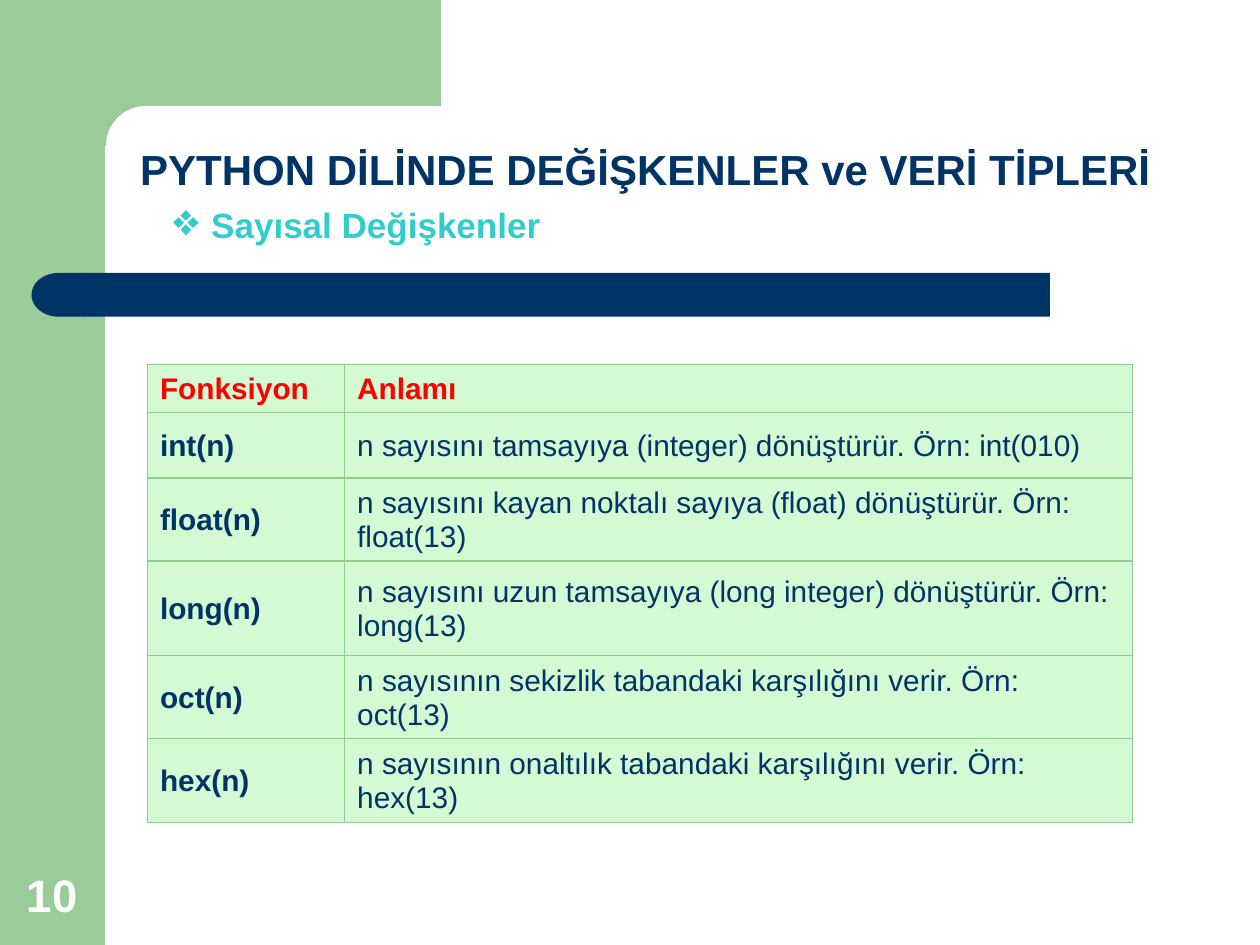
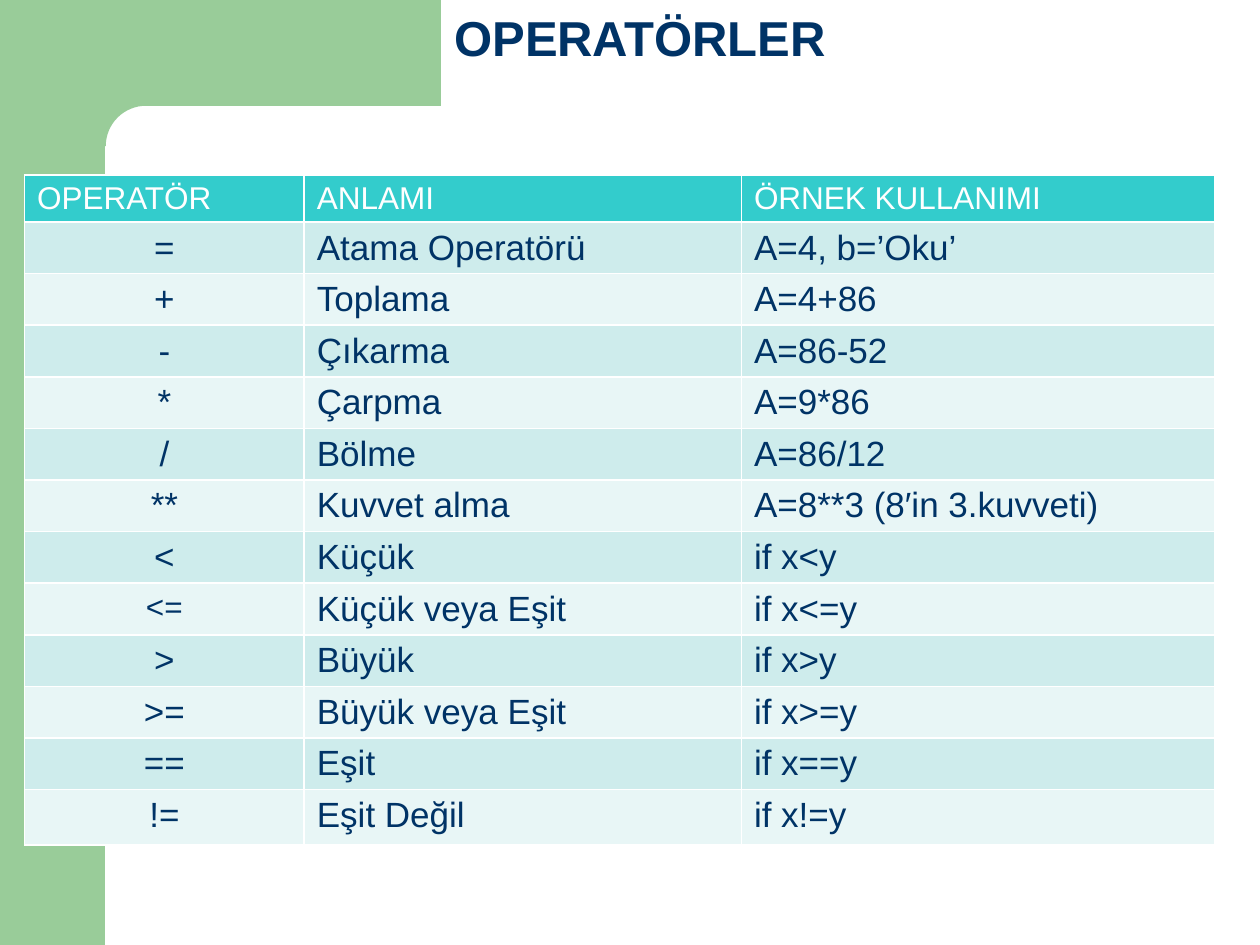
from math import cos, pi, sin

from lxml.etree import SubElement
from pptx import Presentation
from pptx.dml.color import RGBColor as RGB
from pptx.enum.shapes import MSO_SHAPE as SHAPE
from pptx.enum.text import MSO_ANCHOR as ANCHOR, PP_ALIGN as ALIGN
from pptx.oxml.ns import qn
from pptx.util import Inches, Pt

WIDTH, HEIGHT = Inches(10), Inches(7.5)
FONT = "Arial"
COLORS = {
    "green": "99CC99", "navy": "003366", "teal": "33CCCC", "white": "FFFFFF",
    "red": "FF0000", "mint": "D4FAD4", "leaf": "94C994",
    "band_dark": "CEECEC", "band_light": "E8F6F6",
}

FUNCTIONS = [
    ("Fonksiyon", "Anlamı"),
    ("int(n)", "n sayısını tamsayıya (integer) dönüştürür. Örn: int(010)"),
    ("float(n)", "n sayısını kayan noktalı sayıya (float) dönüştürür. Örn: float(13)"),
    ("long(n)", "n sayısını uzun tamsayıya (long integer) dönüştürür. Örn: long(13)"),
    ("oct(n)", "n sayısının sekizlik tabandaki karşılığını verir. Örn: oct(13)"),
    ("hex(n)", "n sayısının onaltılık tabandaki karşılığını verir. Örn: hex(13)"),
]
OPERATORS = [
    ("OPERATÖR", "ANLAMI", "ÖRNEK KULLANIMI"),
    ("=", "Atama Operatörü", "A=4, b=’Oku’"),
    ("+", "Toplama", "A=4+86"),
    ("-", "Çıkarma", "A=86-52"),
    ("*", "Çarpma", "A=9*86"),
    ("/", "Bölme", "A=86/12"),
    ("**", "Kuvvet alma", "A=8**3 (8′in 3.kuvveti)"),
    ("<", "Küçük", "if x<y"),
    ("<=", "Küçük veya Eşit", "if x<=y"),
    (">", "Büyük", "if x>y"),
    (">=", "Büyük veya Eşit", "if x>=y"),
    ("==", "Eşit", "if x==y"),
    ("!=", "Eşit Değil", "if x!=y"),
]


def across(percent):
    """Turn a percentage of the slide width into a length."""
    return int(WIDTH * percent / 100)


def down(percent):
    """Turn a percentage of the slide height into a length."""
    return int(HEIGHT * percent / 100)


def area(x, y, w, h):
    """Turn four percentages into left, top, width and height."""
    return across(x), down(y), across(w), down(h)


def color(name):
    """Look up a palette colour."""
    return RGB.from_string(COLORS[name])


def paint(sp, fill):
    """Give a shape a flat fill without line or shadow."""
    sp.shadow.inherit = False
    sp.fill.solid()
    sp.fill.fore_color.rgb = color(fill)
    sp.line.fill.background()


def add_block(s, kind, box, fill, rotation=0):
    """Add a flat preset shape."""
    sp = s.shapes.add_shape(kind, *area(*box))
    sp.rotation = rotation
    paint(sp, fill)


def write(tf, text, size=18, fill="navy", bold=False, align=ALIGN.LEFT):
    """Write one formatted paragraph and return it."""
    p = tf.paragraphs[0]
    p.alignment = align
    r = p.add_run()
    r.text = text
    r.font.name, r.font.size, r.font.bold = FONT, Pt(size), bold
    r.font.color.rgb = color(fill)
    return p


def add_text(s, box, text, anchor=ANCHOR.TOP, **style):
    """Add a wrapping text box holding one paragraph."""
    tf = s.shapes.add_textbox(*area(*box)).text_frame
    tf.word_wrap = True
    tf.vertical_anchor = anchor
    return write(tf, text, bold=True, **style)


def add_bullet(p, char, indent, percent):
    """Give a paragraph a hanging bullet scaled to its text."""
    pPr = p._p.get_or_add_pPr()
    pPr.set("marL", str(indent))
    pPr.set("indent", str(-indent))
    SubElement(pPr, qn("a:buSzPct"), val=str(percent * 1000))
    SubElement(pPr, qn("a:buChar"), char=char)


def set_borders(cell, line, width):
    """Draw the four borders of a cell."""
    tcPr = cell._tc.get_or_add_tcPr()
    for side in ("L", "R", "T", "B"):
        ln = SubElement(tcPr, qn(f"a:ln{side}"), w=str(Pt(width)))
        fill = SubElement(ln, qn("a:solidFill"))
        SubElement(fill, qn("a:srgbClr"), val=COLORS[line])


def add_grid(s, left, top, cols, rows, data, line, width, look, pad, anchor=ANCHOR.TOP):
    """Add a table whose cell formats come from look(row, column)."""
    box = area(left, top, sum(cols), sum(rows))
    table = s.shapes.add_table(len(rows), len(cols), *box).table
    table.first_row = table.horz_banding = False
    for col, share in zip(table.columns, cols):
        col.width = across(share)
    for row, share in zip(table.rows, rows):
        row.height = down(share)
    for i, texts in enumerate(data):
        for j, text in enumerate(texts):
            cell = table.cell(i, j)
            background, style = look(i, j)
            set_borders(cell, line, width)
            cell.fill.solid()
            cell.fill.fore_color.rgb = color(background)
            cell.vertical_anchor = anchor
            cell.margin_bottom = down(pad)
            write(cell.text_frame, text, **style)


def function_look(i, j):
    """Format the function table: red header, bold first column."""
    return "mint", {"size": 17, "fill": "navy" if i else "red", "bold": i == 0 or j == 0}


def operator_look(i, j):
    """Format the operator table: teal header, banded rows."""
    if i == 0:
        return "teal", {"fill": "white"}
    size = 18 if OPERATORS[i][j] == "<=" else 20
    align = ALIGN.LEFT if j else ALIGN.CENTER
    return "band_dark" if i % 2 else "band_light", {"size": size, "align": align}


def add_frame(s):
    """Draw the green side band and its rounded corner."""
    add_block(s, SHAPE.RECTANGLE, (0, 0, 8.33, 100), "green")
    edge, radius, steps = Inches(0.84), Inches(0.32), 16
    center = edge + radius
    turns = [pi / 2 * k / steps for k in range(steps + 1)]
    arc = [(center - radius * sin(t), center - radius * cos(t)) for t in turns]
    fb = s.shapes.build_freeform(across(5), 0)
    fb.add_line_segments([(across(35), 0), (across(35), edge), *arc, (across(5), center)])
    paint(fb.convert_to_shape(), "green")


def add_title_bar(s):
    """Draw the navy bar with its rounded left end."""
    add_block(s, SHAPE.RECTANGLE, (6.7, 28.88, 76.63, 4.63), "navy")
    add_block(s, SHAPE.FLOWCHART_DELAY, (2.5, 28.88, 4.3, 4.63), "navy", rotation=180)


def add_slide(prs):
    """Add a blank slide with the shared frame."""
    s = prs.slides.add_slide(prs.slide_layouts[6])
    add_frame(s)
    return s


def build_functions(prs):
    """Build the slide on numeric conversion functions."""
    s = add_slide(prs)
    add_title_bar(s)
    p = add_text(s, (12.75, 20.9, 85, 5.87), "Sayısal Değişkenler", size=20, fill="teal")
    add_bullet(p, "❖", across(3.03), 130)
    add_grid(s, 11.7, 38.53, [15.65, 62.5], [5.08, 6.98, 8.78, 10.05, 8.78, 8.85],
             FUNCTIONS, "leaf", 0.75, function_look, 0.55, ANCHOR.MIDDLE)
    add_text(s, (10.15, 14.53, 88, 6.67), "PYTHON DİLİNDE DEĞİŞKENLER ve VERİ TİPLERİ", size=24)
    add_text(s, (1.15, 91.07, 6.4, 7.07), "10", ANCHOR.BOTTOM, size=26, fill="white")


def build_operators(prs):
    """Build the slide listing the operators."""
    s = add_slide(prs)
    add_text(s, (35.08, 0.1, 64, 8.4), "OPERATÖRLER", size=28)
    add_grid(s, 1.95, 18.53, [22.2, 34.7, 37.6], [4.97] + [5.46] * 11 + [5.85],
             OPERATORS, "white", 1, operator_look, 0.27)


def main():
    """Build and save the deck."""
    prs = Presentation()
    prs.slide_width, prs.slide_height = WIDTH, HEIGHT
    build_functions(prs)
    build_operators(prs)
    prs.save("out.pptx")


if __name__ == "__main__":
    main()
